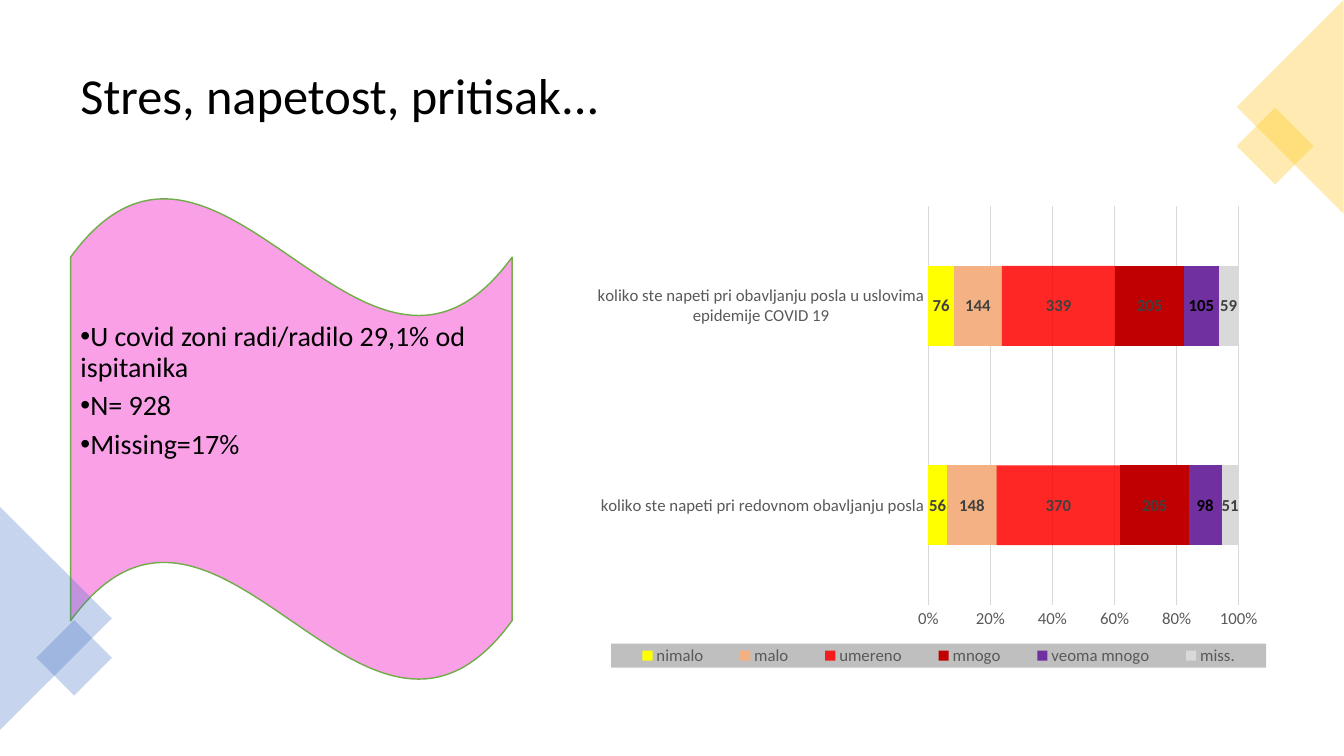
from lxml import etree
from pptx import Presentation
from pptx import util as u
from pptx.chart import data
from pptx.dml.color import RGBColor
from pptx.enum import chart as kinds, shapes, text
from pptx.oxml import ns

FONT = "Calibri"
BLACK = RGBColor(0x00, 0x00, 0x00)
DARK_GREY = RGBColor(0x40, 0x40, 0x40)
MID_GREY = RGBColor(0x59, 0x59, 0x59)
LIGHT_GREY = RGBColor(0xD9, 0xD9, 0xD9)
PINK = RGBColor(0xFA, 0xA0, 0xE7)
GREEN = RGBColor(0x70, 0xAD, 0x47)
BLUE = RGBColor(0x44, 0x72, 0xC4)
GOLD = RGBColor(0xFF, 0xC0, 0x00)
YELLOW = RGBColor(0xFF, 0xFF, 0x00)
PEACH = RGBColor(0xF4, 0xB1, 0x83)
RED = RGBColor(0xFF, 0x00, 0x00)
DEEP_RED = RGBColor(0xC0, 0x00, 0x00)
PURPLE = RGBColor(0x70, 0x30, 0xA0)

deck = Presentation()
deck.slide_width, deck.slide_height = u.Inches(13.333), u.Inches(7.5)
page = deck.slides.add_slide(deck.slide_layouts[6])


def place(left, top, width, height):
    across, down = deck.slide_width / 100, deck.slide_height / 100
    return [int(left * across), int(top * down), int(width * across), int(height * down)]


def style(font, size, color, bold=False):
    font.name, font.size, font.bold = FONT, u.Pt(size), bold
    font.color.rgb = color


title = page.shapes.add_textbox(*place(5.25, 4.67, 89.48, 16.53))
title.text_frame.word_wrap = True
title.text_frame.vertical_anchor = text.MSO_ANCHOR.MIDDLE
para = title.text_frame.paragraphs[0]
para.line_spacing = 0.9
span = para.add_run()
span.text = "Stres, napetost, pritisak..."
style(span.font, 36, BLACK)

wave = page.shapes.add_shape(shapes.MSO_SHAPE.WAVE, *place(5.25, 26, 32.85, 64.13))
wave.shadow.inherit = False
wave.fill.solid()
wave.fill.fore_color.rgb = PINK
wave.line.color.rgb = GREEN
wave.line.width = u.Pt(1)
frame = wave.text_frame
frame.word_wrap = True
frame.vertical_anchor = text.MSO_ANCHOR.TOP
facts = ["U covid zoni radi/radilo 29,1% od ispitanika", "N= 928", "Missing=17%"]
for index, fact in enumerate(facts):
    para = frame.add_paragraph() if index else frame.paragraphs[0]
    para.alignment = text.PP_ALIGN.LEFT
    para.line_spacing = 0.9
    para.space_after = u.Pt(6)
    settings = para._p.get_or_add_pPr()
    settings.set("marL", "0")
    settings.set("indent", str(-u.Inches(0.25)))
    etree.SubElement(settings, ns.qn("a:buFont")).set("typeface", "Arial")
    etree.SubElement(settings, ns.qn("a:buChar")).set("char", "•")
    span = para.add_run()
    span.text = fact
    style(span.font, 20, BLACK)

TRIANGLE = shapes.MSO_SHAPE.ISOSCELES_TRIANGLE
SQUARE = shapes.MSO_SHAPE.RECTANGLE
corners = [
    (TRIANGLE, (-4.13, 74.4, 16.58, 14.8), 90, BLUE),
    (SQUARE, (3.53, 83.47, 3.98, 7.07), 45, BLUE),
    (SQUARE, (92.85, 15.73, 4.05, 7.2), 45, GOLD),
    (TRIANGLE, (88.05, 7.07, 15.9, 14.13), 270, GOLD),
]
for kind, area, turn, color in corners:
    corner = page.shapes.add_shape(kind, *place(*area))
    corner.shadow.inherit = False
    corner.rotation = turn
    corner.fill.solid()
    corner.fill.fore_color.rgb = color
    corner.line.fill.background()
    tint = corner.element.xpath("./p:spPr/a:solidFill/a:srgbClr")[0]
    etree.SubElement(tint, ns.qn("a:alpha")).set("val", "30000")

answers = [
    ("nimalo", (56, 76), YELLOW, DARK_GREY),
    ("malo", (148, 144), PEACH, DARK_GREY),
    ("umereno", (370, 339), RED, DARK_GREY),
    ("mnogo", (205, 205), DEEP_RED, DARK_GREY),
    ("veoma mnogo", (98, 105), PURPLE, BLACK),
    ("miss.", (51, 59), LIGHT_GREY, DARK_GREY),
]
table = data.CategoryChartData()
table.categories = [
    "koliko ste napeti pri redovnom obavljanju posla",
    "koliko ste napeti pri obavljanju posla u uslovima epidemije COVID 19",
]
for name, counts, color, ink in answers:
    table.add_series(name, counts)
chart = page.shapes.add_chart(
    kinds.XL_CHART_TYPE.BAR_STACKED_100, *place(43.43, 26, 51.3, 63.6), table
).chart
chart.has_title = False
style(chart.font, 10, BLACK)
plot = chart.plots[0]
plot.gap_width, plot.overlap = 150, 100
plot.vary_by_categories = False
for series, (name, counts, color, ink) in zip(plot.series, answers):
    series.format.fill.solid()
    series.format.fill.fore_color.rgb = color
    labels = series.data_labels
    labels.show_value = True
    labels.position = kinds.XL_LABEL_POSITION.CENTER
    style(labels.font, 12, ink, True)
red_fill = chart.element.xpath(".//c:ser/c:spPr/a:solidFill/a:srgbClr[@val='FF0000']")[0]
etree.SubElement(red_fill, ns.qn("a:alpha")).set("val", "85000")

for axis in (chart.category_axis, chart.value_axis):
    axis.major_tick_mark = axis.minor_tick_mark = kinds.XL_TICK_MARK.NONE
    axis.format.line.fill.background()
    style(axis.tick_labels.font, 12, MID_GREY)
chart.category_axis.has_major_gridlines = False
scale = chart.value_axis
scale.minimum_scale, scale.maximum_scale, scale.major_unit = 0, 1, 0.2
scale.tick_labels.number_format = "0%"
scale.tick_labels.number_format_is_linked = False
scale.has_major_gridlines = True
scale.major_gridlines.format.line.color.rgb = LIGHT_GREY
scale.major_gridlines.format.line.width = u.Pt(0.75)

chart.has_legend = True
chart.legend.position = kinds.XL_LEGEND_POSITION.BOTTOM
chart.legend.include_in_layout = False
style(chart.legend.font, 12, MID_GREY)
legend = chart.element.xpath(".//c:legend")[0]
backing = etree.Element(ns.qn("c:spPr"))
solid = etree.SubElement(backing, ns.qn("a:solidFill"))
etree.SubElement(solid, ns.qn("a:srgbClr")).set("val", "BFBFBF")
legend.xpath("./c:txPr")[0].addprevious(backing)

plot_area = chart.element.xpath(".//c:plotArea")[0]
for part, slot, shares in [
    (plot_area, 0, (0.5, 0.02, 0.45, 0.83)),
    (legend, 1, (0.04, 0.93, 0.95, 0.05)),
]:
    for old in part.xpath("./c:layout"):
        part.remove(old)
    layout = etree.Element(ns.qn("c:layout"))
    manual = etree.SubElement(layout, ns.qn("c:manualLayout"))
    rules = [("xMode", "edge"), ("yMode", "edge"), *zip("xywh", shares)]
    if part is plot_area:
        rules.insert(0, ("layoutTarget", "inner"))
    for tag, value in rules:
        etree.SubElement(manual, ns.qn("c:" + tag)).set("val", str(value))
    part.insert(slot, layout)

deck.save("out.pptx")
